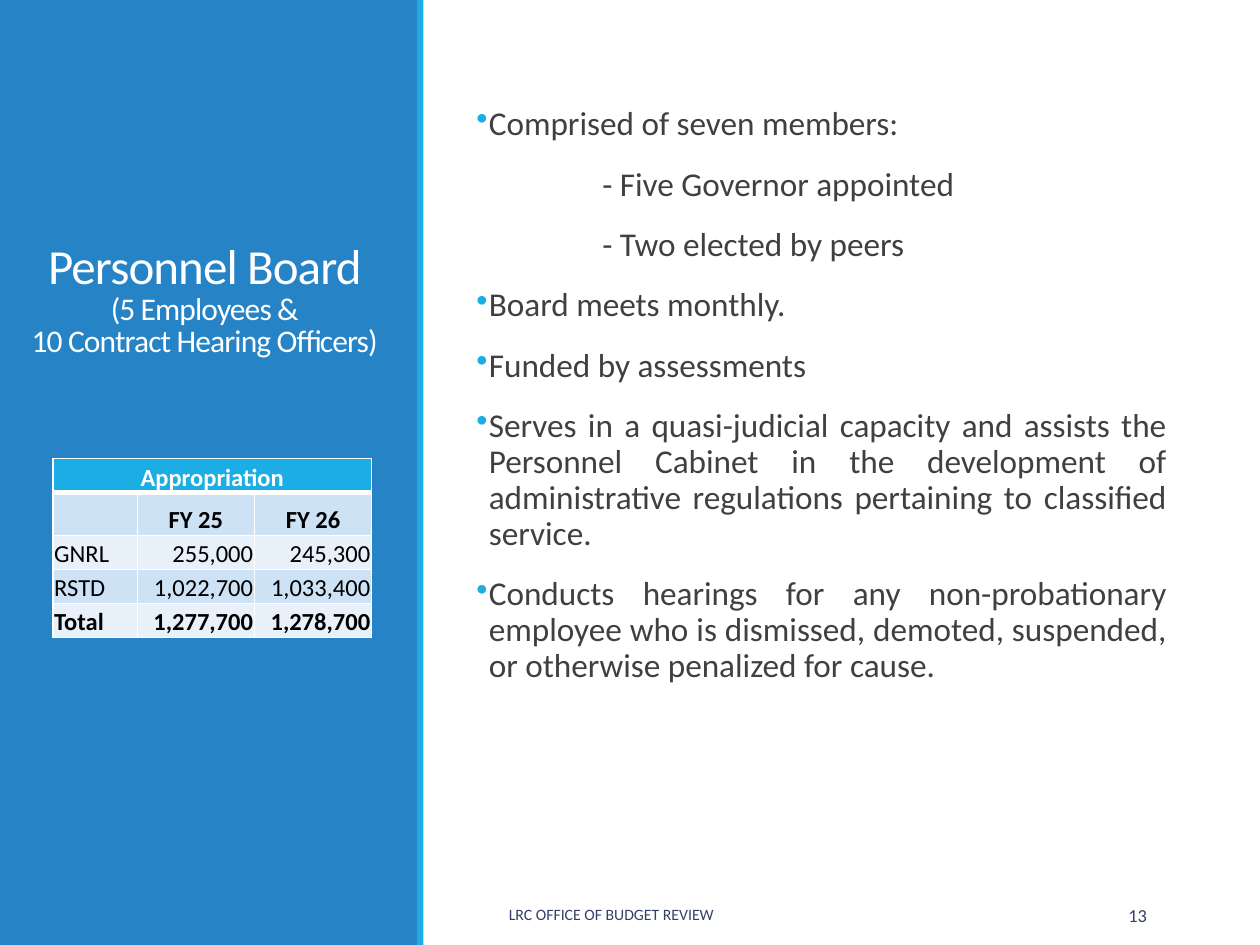
from dataclasses import dataclass

from lxml import etree
from pptx import Presentation
from pptx import util as u
from pptx.dml.color import RGBColor
from pptx.enum import shapes, text
from pptx.oxml import ns

WHITE = RGBColor(0xFF, 0xFF, 0xFF)
BLACK = RGBColor(0x00, 0x00, 0x00)
BLUE = RGBColor(0x26, 0x83, 0xC6)
CYAN = RGBColor(0x1C, 0xAD, 0xE4)
GRAY = RGBColor(0x40, 0x40, 0x40)
NAVY = RGBColor(0x34, 0x40, 0x68)
BAND_DARK = RGBColor(0xCD, 0xE3, 0xF5)
BAND_LIGHT = RGBColor(0xE8, 0xF1, 0xFA)

FONT = "Calibri"
CELL = u.Inches(0.1)
ALIGN = text.PP_ALIGN


@dataclass(frozen=True)
class Box:
    """Position in grid columns and rows; the slide is 100 by 75."""
    left: float
    top: float
    width: float
    height: float

    def lengths(self) -> tuple:
        values = (self.left, self.top, self.width, self.height)
        return tuple(int(value * CELL) for value in values)


@dataclass(frozen=True)
class Bar:
    box: Box
    color: RGBColor


@dataclass(frozen=True)
class Item:
    words: str
    bulleted: bool = True


@dataclass(frozen=True)
class Note:
    box: Box
    words: str
    size: float
    align: text.PP_ALIGN


BARS = [Bar(Box(0, 0, 33.2, 75), BLUE), Bar(Box(33.1, 0, 0.5, 75), CYAN)]
TITLE_LINES = [("Personnel Board", 28), ("(5 Employees &", 18),
               ("10 Contract Hearing Officers)", 18)]
ITEMS = [
    Item("Comprised of seven members:"),
    Item("- Five Governor appointed", False),
    Item("- Two elected by peers", False),
    Item("Board meets monthly."),
    Item("Funded by assessments"),
    Item("Serves in a quasi-judicial capacity and assists the Personnel Cabinet in the "
         "development of administrative regulations pertaining to classified service."),
    Item("Conducts hearings for any non-probationary employee who is dismissed, demoted, "
         "suspended, or otherwise penalized for cause."),
]
NOTES = [
    Note(Box(39.4, 70.6, 38.1, 4), "LRC OFFICE OF BUDGET REVIEW", 9, ALIGN.LEFT),
    Note(Box(81.2, 70.6, 10.8, 4), "13", 10.5, ALIGN.RIGHT),
]
ROWS = [
    ("Appropriation", "", ""),
    ("", "FY 25", "FY 26"),
    ("GNRL", "255,000", "245,300"),
    ("RSTD", "1,022,700", "1,033,400"),
    ("Total", "1,277,700", "1,278,700"),
]
COLUMN_WIDTHS = (6.7, 9.3, 9.3)
ROW_HEIGHTS = (2.7, 3.4, 2.7, 2.7, 2.7)


def format_font(font, size: float, color: RGBColor, bold: bool = False) -> None:
    font.name, font.size, font.bold = FONT, u.Pt(size), bold
    font.color.rgb = color


def draw_bar(slide, bar: Bar) -> None:
    shape = slide.shapes.add_shape(shapes.MSO_SHAPE.RECTANGLE, *bar.box.lengths())
    shape.shadow.inherit = False
    shape.fill.solid()
    shape.fill.fore_color.rgb = bar.color
    shape.line.fill.background()


def draw_title(slide) -> None:
    title = slide.shapes.title
    title.left, title.top, title.width, title.height = Box(0, 6.5, 32.5, 25).lengths()
    frame = title.text_frame
    frame.auto_size = text.MSO_AUTO_SIZE.NONE
    frame.vertical_anchor = text.MSO_ANCHOR.BOTTOM
    frame.margin_bottom = 3 * CELL
    paragraph = frame.paragraphs[0]
    paragraph.text = "\v".join(words for words, _ in TITLE_LINES)
    paragraph.alignment, paragraph.line_spacing = ALIGN.CENTER, 0.85
    for run, (_, size) in zip(paragraph.runs, TITLE_LINES):
        format_font(run.font, size, WHITE)
        run.font._element.set("spc", "-50")
    for line_break, (_, size) in zip(paragraph._p.findall(ns.qn("a:br")), TITLE_LINES):
        etree.SubElement(line_break, ns.qn("a:rPr"), sz=str(size * 100))


def set_bullet(paragraph, bulleted: bool) -> None:
    properties = paragraph._p.get_or_add_pPr()
    hanging = CELL if bulleted else 0
    properties.set("marL", str(CELL if bulleted else 10 * CELL))
    properties.set("indent", str(-hanging))
    if bulleted:
        color = etree.SubElement(properties, ns.qn("a:buClr"))
        etree.SubElement(color, ns.qn("a:srgbClr"), val=str(CYAN))
        etree.SubElement(properties, ns.qn("a:buChar"), char="•")


def draw_items(slide) -> None:
    frame = slide.shapes.add_textbox(*Box(37.8, 8, 54.8, 62.6).lengths()).text_frame
    frame.word_wrap = True
    frame.margin_left = frame.margin_right = 0
    for index, item in enumerate(ITEMS):
        paragraph = frame.add_paragraph() if index else frame.paragraphs[0]
        paragraph.text = item.words
        paragraph.alignment, paragraph.line_spacing = ALIGN.JUSTIFY, 0.9
        paragraph.space_before, paragraph.space_after = u.Pt(12), u.Pt(2)
        set_bullet(paragraph, item.bulleted)
        format_font(paragraph.runs[0].font, 19, GRAY)


def draw_note(slide, note: Note) -> None:
    frame = slide.shapes.add_textbox(*note.box.lengths()).text_frame
    frame.word_wrap = True
    frame.vertical_anchor = text.MSO_ANCHOR.MIDDLE
    paragraph = frame.paragraphs[0]
    paragraph.text, paragraph.alignment = note.words, note.align
    format_font(paragraph.runs[0].font, note.size, NAVY)


def set_borders(cell, bottom: float) -> None:
    properties = cell._tc.get_or_add_tcPr()
    for index, (side, width) in enumerate(
            (("lnL", 1), ("lnR", 1), ("lnT", 1), ("lnB", bottom))):
        line = etree.Element(ns.qn(f"a:{side}"), w=str(u.Pt(width)))
        fill = etree.SubElement(line, ns.qn("a:solidFill"))
        etree.SubElement(fill, ns.qn("a:srgbClr"), val=str(WHITE))
        properties.insert(index, line)


def format_cell(cell, words: str, row: int, column: int) -> None:
    cell.margin_left = cell.margin_top = cell.margin_right = u.Inches(0.01)
    cell.margin_bottom = 0
    cell.vertical_anchor = text.MSO_ANCHOR.BOTTOM
    cell.fill.solid()
    cell.fill.fore_color.rgb = CYAN if row == 0 else BAND_DARK if row % 2 else BAND_LIGHT
    set_borders(cell, 3 if row == 0 else 1)
    paragraph = cell.text_frame.paragraphs[0]
    paragraph.text = words
    paragraph.alignment = ALIGN.CENTER if row < 2 else ALIGN.RIGHT if column else ALIGN.LEFT
    for run in paragraph.runs:
        format_font(run.font, 14, BLACK if row else WHITE, row in (0, 1, len(ROWS) - 1))


def draw_table(slide) -> None:
    box = Box(4.2, 36.4, sum(COLUMN_WIDTHS), sum(ROW_HEIGHTS))
    table = slide.shapes.add_table(len(ROWS), len(COLUMN_WIDTHS), *box.lengths()).table
    for column, width in zip(table.columns, COLUMN_WIDTHS):
        column.width = int(width * CELL)
    for row, height in zip(table.rows, ROW_HEIGHTS):
        row.height = int(height * CELL)
    for row, values in enumerate(ROWS):
        for column, words in enumerate(values):
            format_cell(table.cell(row, column), words, row, column)
    table.cell(0, 0).merge(table.cell(0, len(COLUMN_WIDTHS) - 1))


def main() -> None:
    presentation = Presentation()
    presentation.slide_width, presentation.slide_height = 100 * CELL, 75 * CELL
    slide = presentation.slides.add_slide(presentation.slide_layouts[5])
    for bar in BARS:
        draw_bar(slide, bar)
    title = slide.shapes.title._element
    title.getparent().append(title)
    draw_title(slide)
    draw_items(slide)
    for note in NOTES:
        draw_note(slide, note)
    draw_table(slide)
    presentation.save("out.pptx")


if __name__ == "__main__":
    main()
